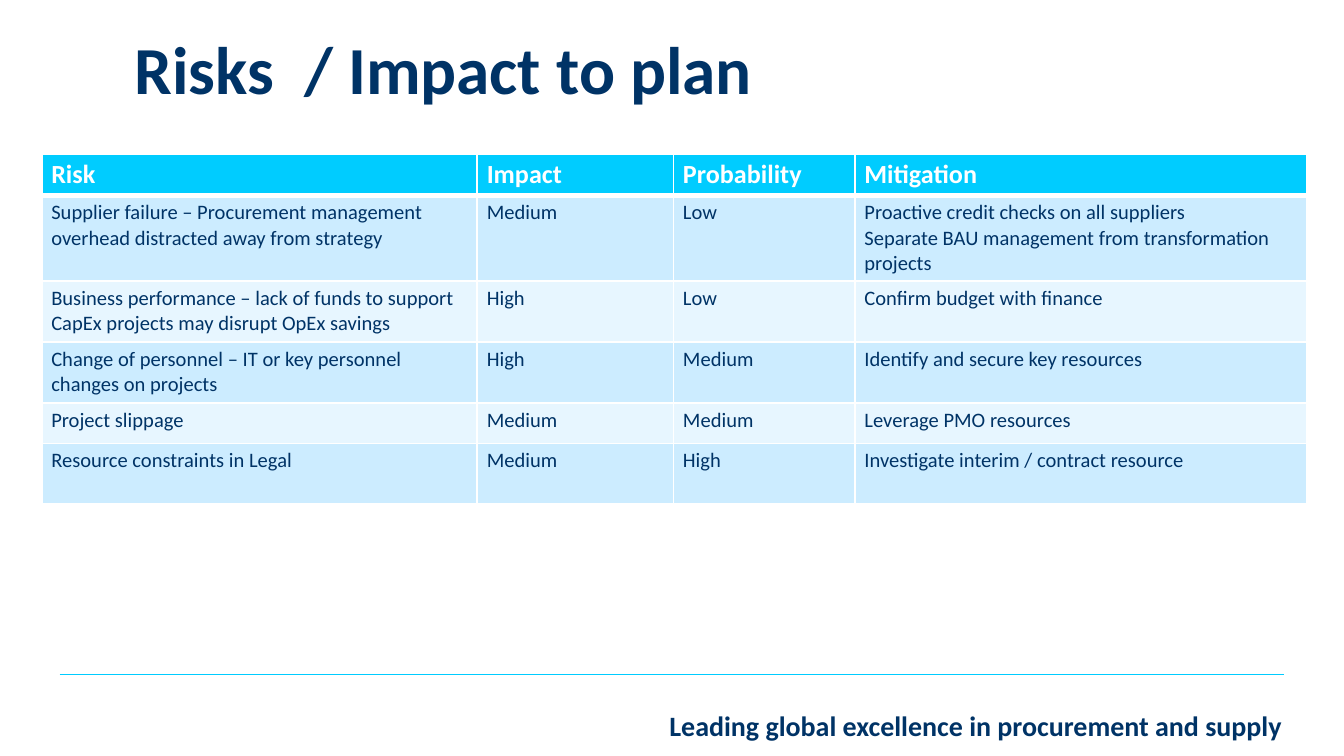
import pptx
import pptx.dml.color
import pptx.enum.shapes
import pptx.enum.text
import pptx.oxml
import pptx.oxml.ns
import pptx.util

Pt = pptx.util.Pt
RGBColor = pptx.dml.color.RGBColor
PP_ALIGN = pptx.enum.text.PP_ALIGN
MSO_ANCHOR = pptx.enum.text.MSO_ANCHOR

NAVY = RGBColor(0x00, 0x33, 0x66)
CYAN = RGBColor(0x00, 0xCC, 0xFF)
PALE = RGBColor(0xCC, 0xEC, 0xFF)
PALER = RGBColor(0xE7, 0xF6, 0xFF)
WHITE = RGBColor(0xFF, 0xFF, 0xFF)

COL_SHARES = [3.24, 1.46, 1.35, 3.36]
ROW_HEIGHTS = [21.6, 45.8, 32.6, 32.6, 21.8, 32.4]
RISKS = [
    ["Risk", "Impact", "Probability", "Mitigation"],
    ["Supplier failure – Procurement management overhead distracted away from strategy",
     "Medium", "Low",
     "Proactive credit checks on all suppliers\n"
     "Separate BAU management from transformation projects"],
    ["Business performance – lack of funds to support CapEx projects may disrupt OpEx savings",
     "High", "Low", "Confirm budget with finance"],
    ["Change of personnel – IT or key personnel changes on projects",
     "High", "Medium", "Identify and secure key resources"],
    ["Project slippage", "Medium", "Medium", "Leverage PMO resources"],
    ["Resource constraints in Legal", "Medium", "High",
     "Investigate interim / contract resource"],
]


def write_text(tf, text, size=11, color=NAVY, bold=False, align=PP_ALIGN.LEFT,
               anchor=MSO_ANCHOR.TOP, margins=(7.2, 3.6), line_spacing=None):
    """Fill a text frame, one paragraph for each line of text."""
    tf.word_wrap = True
    tf.vertical_anchor = anchor
    tf.margin_left = tf.margin_right = Pt(margins[0])
    tf.margin_top = tf.margin_bottom = Pt(margins[1])
    for i, line in enumerate(text.split("\n")):
        p = tf.paragraphs[0] if i == 0 else tf.add_paragraph()
        p.alignment = align
        p.space_before = Pt(0)
        if line_spacing:
            p.line_spacing = Pt(line_spacing)
        r = p.add_run()
        r.text = line
        r.font.name = "Calibri"
        r.font.size = Pt(size)
        r.font.bold = bold
        r.font.color.rgb = color


def set_borders(cell, **widths):
    """Give the four sides of a cell white lines of the given widths."""
    tcPr = cell._tc.get_or_add_tcPr()
    for side in "LRTB":
        tcPr.append(pptx.oxml.parse_xml(
            f'<a:ln{side} {pptx.oxml.ns.nsdecls("a")} w="{Pt(widths.get(side, 1))}">'
            f'<a:solidFill><a:srgbClr val="{WHITE}"/></a:solidFill></a:ln{side}>'))


def add_title(slide, left, top, width, height):
    """Place and format the title placeholder."""
    sp = slide.shapes.title
    sp.left, sp.top, sp.width, sp.height = map(Pt, (left, top, width, height))
    write_text(sp.text_frame, "Risks  / Impact to plan", size=36, bold=True,
               margins=(0, 0), line_spacing=36)
    sp.text_frame.auto_size = pptx.enum.text.MSO_AUTO_SIZE.NONE


def add_risk_table(slide, left, top, width, height):
    """Draw the risk register with a header row and alternating bands."""
    frame = slide.shapes.add_table(len(RISKS), len(COL_SHARES),
                                   *map(Pt, (left, top, width, height)))
    table = frame.table
    for col, share in zip(table.columns, COL_SHARES):
        col.width = Pt(width * share / sum(COL_SHARES))
    for row, row_height in zip(table.rows, ROW_HEIGHTS):
        row.height = Pt(height * row_height / sum(ROW_HEIGHTS))
    for i, texts in enumerate(RISKS):
        header = i == 0
        fill = CYAN if header else PALE if i % 2 else PALER
        for j, text in enumerate(texts):
            cell = table.cell(i, j)
            write_text(cell.text_frame, text, size=14 if header else 11,
                       color=WHITE if header else NAVY, bold=header)
            cell.margin_left = cell.margin_right = Pt(5.1)
            cell.margin_top = cell.margin_bottom = Pt(2.6)
            cell.vertical_anchor = MSO_ANCHOR.TOP
            set_borders(cell, T=3 if i == 1 else 1, B=3 if header else 1)
            cell.fill.solid()
            cell.fill.fore_color.rgb = fill


def add_footer(slide, left, top, width, height):
    """Draw the rule and the right-aligned strapline beneath it."""
    strap_left, strap_top = left + 221.8, top + 14.4
    sp = slide.shapes.add_shape(
        pptx.enum.shapes.MSO_SHAPE.RECTANGLE, Pt(strap_left), Pt(strap_top),
        Pt(left + width - strap_left), Pt(top + height - strap_top))
    sp.shadow.inherit = False
    sp.fill.solid()
    sp.fill.fore_color.rgb = WHITE
    sp.line.fill.background()
    write_text(sp.text_frame, "Leading global excellence in procurement and supply",
               size=15, bold=True, align=PP_ALIGN.RIGHT)
    rule = slide.shapes.add_connector(
        pptx.enum.shapes.MSO_CONNECTOR.STRAIGHT,
        Pt(left), Pt(top), Pt(left + width - 6.5), Pt(top))
    rule.line.color.rgb = CYAN
    rule.line.width = Pt(1)
    rule._element.spPr.append(pptx.oxml.parse_xml(
        f'<a:effectLst {pptx.oxml.ns.nsdecls("a")}/>'))


def main():
    """Build the slide and save it."""
    prs = pptx.Presentation()
    prs.slide_width, prs.slide_height = Pt(720), Pt(405)
    slide = prs.slides.add_slide(prs.slide_layouts[5])
    add_footer(slide, 31.9, 361.4, 662.2, 39.7)
    add_title(slide, 72, 21.6, 598.3, 78.5)
    add_risk_table(slide, 22.4, 82.4, 677.6, sum(ROW_HEIGHTS))
    prs.save("out.pptx")


if __name__ == "__main__":
    main()
